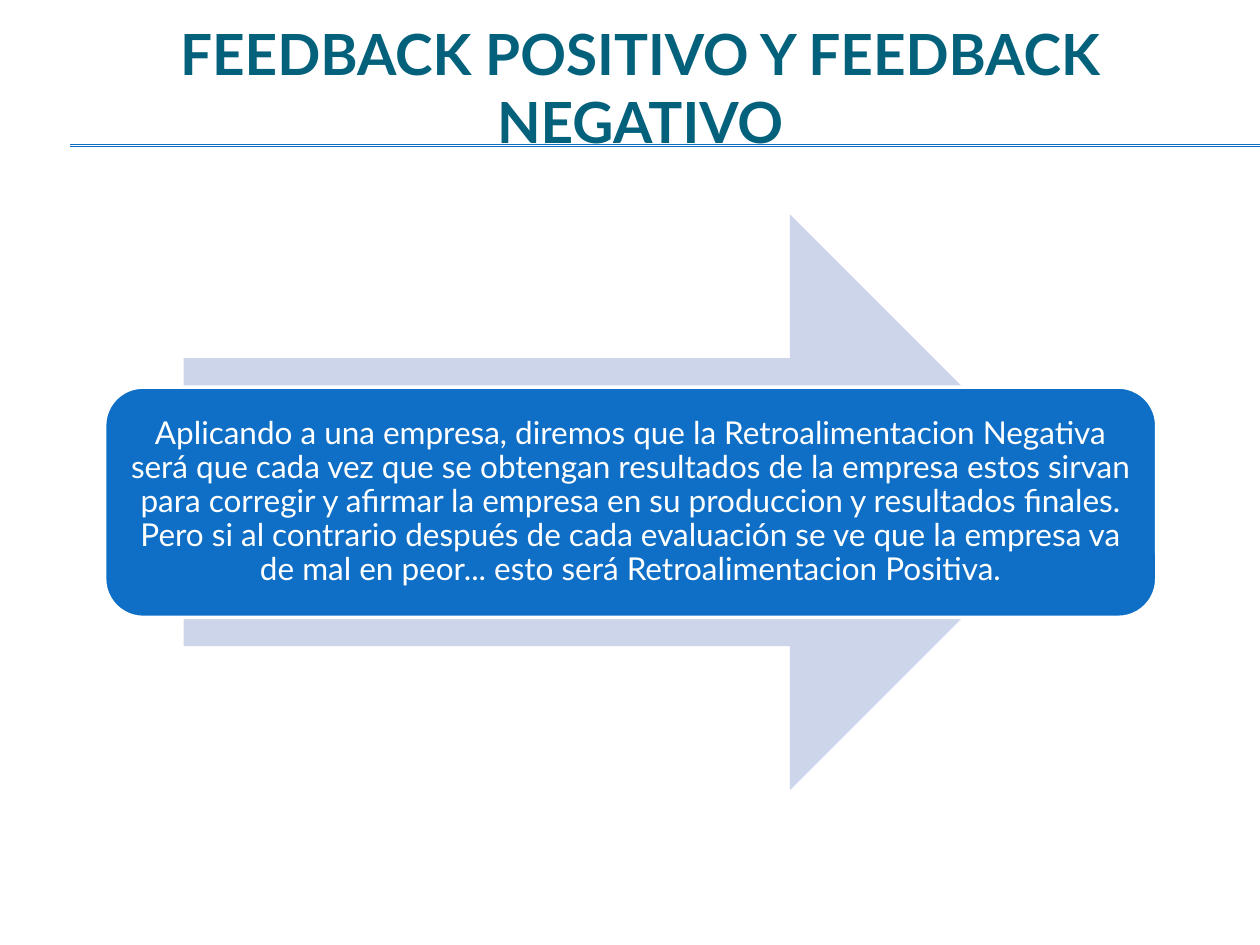
from dataclasses import dataclass

from lxml.etree import SubElement
from pptx import Presentation
from pptx.dml.color import RGBColor
from pptx.enum.shapes import MSO_CONNECTOR as Link, MSO_SHAPE as Form
from pptx.enum.text import MSO_ANCHOR as Anchor, PP_ALIGN as Align
from pptx.oxml.ns import qn
from pptx.util import Cm, Pt


@dataclass(frozen=True)
class Theme:
    """Colours, font and type sizes of the slide."""
    font: str = "Lato"
    title: str = "04617B"
    blue: str = "0F6FC6"
    pale: str = "CCD5EA"
    white: str = "FFFFFF"
    head: float = 32.4
    body: float = 18


THEME = Theme()
TITLE = "FEEDBACK POSITIVO Y FEEDBACK NEGATIVO"
BODY = (
    "Aplicando a una empresa, diremos que la Retroalimentacion Negativa será "
    "que cada vez que se obtengan resultados de la empresa estos sirvan para "
    "corregir y afirmar la empresa en su produccion y resultados finales. Pero "
    "si al contrario después de cada evaluación se ve que la empresa va de mal "
    "en peor... esto será Retroalimentacion Positiva."
)


def apply(item, **form):
    """Set each format value on the item."""
    for name, value in form.items():
        setattr(item, name, value)


def write(shape, text, inset, spacing, **font):
    """Fill a shape with one centred paragraph."""
    frame = shape.text_frame
    sides = ("left", "right", "top", "bottom")
    margins = {f"margin_{side}": Cm(inset) for side in sides}
    apply(frame, word_wrap=True, vertical_anchor=Anchor.MIDDLE, **margins)
    para = frame.paragraphs[0]
    apply(para, alignment=Align.CENTER, line_spacing=spacing)
    run = para.add_run()
    run.text = text
    color = font.pop("color")
    apply(run.font, name=THEME.font, **font)
    run.font.color.rgb = RGBColor.from_string(color)


def add_form(slide, form, box, fill):
    """Add a flat filled shape without an outline."""
    shape = slide.shapes.add_shape(form, *map(Cm, box))
    shape.shadow.inherit = False
    shape.fill.solid()
    shape.fill.fore_color.rgb = RGBColor.from_string(fill)
    shape.line.fill.background()
    return shape


def add_rule(slide, left, right, y):
    """Draw a thin horizontal line."""
    rule = slide.shapes.add_connector(Link.STRAIGHT, *map(Cm, (left, y, right, y)))
    rule.line.width = Pt(0.75)
    rule.line.color.rgb = RGBColor.from_string(THEME.blue)
    SubElement(rule.element.spPr, qn("a:effectLst"))


def add_header(slide, left, top, width, height):
    """Place the double rule and the title over it."""
    for gap in (0.2, 0.17):
        add_rule(slide, left + 0.58, 25.4, top + height - gap)
    label = slide.shapes.add_textbox(*map(Cm, (left, top, width, height)))
    write(label, TITLE, 0.25, 1, size=Pt(THEME.head), bold=True, color=THEME.title)


def add_panel(slide, left, top, width, height):
    """Place the wide arrow with the text card across its middle."""
    long, tall = 0.85 * width, 0.4 * height
    arrow = (left + (width - long) / 2, top, long, height)
    add_form(slide, Form.RIGHT_ARROW, arrow, THEME.pale)
    card = (left, top + (height - tall) / 2, width, tall)
    card = add_form(slide, Form.ROUNDED_RECTANGLE, card, THEME.blue)
    card.line.width = Pt(2)
    card.line.color.rgb = RGBColor.from_string(THEME.white)
    write(card, BODY, 0.18, 0.9, size=Pt(THEME.body), color=THEME.white)


def main():
    """Build and save the slide."""
    deck = Presentation()
    apply(deck, slide_width=Cm(25.4), slide_height=Cm(19.05))
    slide = deck.slides.add_slide(deck.slide_layouts[6])
    add_header(slide, 0.84, 0.38, 24.13, 2.74)
    add_panel(slide, 2.11, 4.32, 21.21, 11.61)
    deck.save("out.pptx")


if __name__ == "__main__":
    main()
